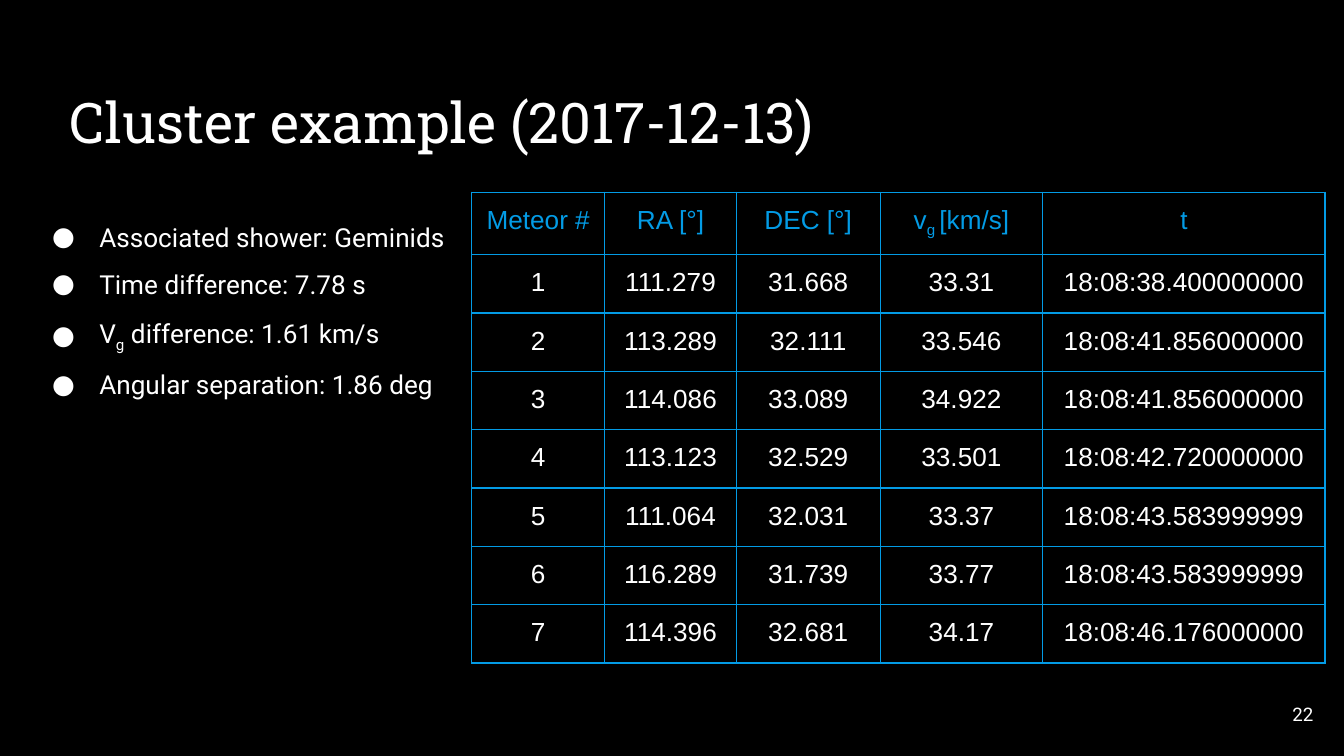
import pptx
import pptx.dml.color
import pptx.enum.text
import pptx.oxml
import pptx.oxml.ns
import pptx.util
from pptx.util import Inches

WHITE = "FFFFFF"
BLUE = "039BE5"
ALIGN = pptx.enum.text.PP_ALIGN
ANCHOR = pptx.enum.text.MSO_ANCHOR

HEADERS = ["Meteor #", "RA [°]", "DEC [°]", ["v", "g ", "[km/s]"], "t"]
METEORS = [
    ["1", "111.279", "31.668", "33.31", "18:08:38.400000000"],
    ["2", "113.289", "32.111", "33.546", "18:08:41.856000000"],
    ["3", "114.086", "33.089", "34.922", "18:08:41.856000000"],
    ["4", "113.123", "32.529", "33.501", "18:08:42.720000000"],
    ["5", "111.064", "32.031", "33.37", "18:08:43.583999999"],
    ["6", "116.289", "31.739", "33.77", "18:08:43.583999999"],
    ["7", "114.396", "32.681", "34.17", "18:08:46.176000000"],
]
COLUMN_WIDTHS = [0.99, 0.98, 1.07, 1.21, 2.1]
ROW_HEIGHTS = [0.42] * 2 + [0.38] + [0.42] * 5
FACTS = [
    "Associated shower: Geminids",
    "Time difference: 7.78 s",
    ["V", "g", " difference: 1.61 km/s"],
    "Angular separation: 1.86 deg",
]


def color(value):
    return pptx.dml.color.RGBColor.from_string(value)


def add_element(parent, xml):
    namespace = pptx.oxml.ns.nsdecls("a")
    parent.append(pptx.oxml.parse_xml(xml.replace(" ", f" {namespace} ", 1)))


def write(paragraph, text, font_name, size, font_color, alignment=ALIGN.LEFT):
    parts = [text] if isinstance(text, str) else text
    for index, part in enumerate(parts):
        run = paragraph.add_run()
        run.text = part
        if index == 1:
            run.font._element.set("baseline", "-25000")
    paragraph.alignment = alignment
    paragraph.font.name = font_name
    paragraph.font.size = pptx.util.Pt(size)
    paragraph.font.color.rgb = color(font_color)


def set_margins(target):
    for side in ("left", "top", "right", "bottom"):
        setattr(target, f"margin_{side}", Inches(0.1))


def add_text_frame(slide, box, anchor):
    frame = slide.shapes.add_textbox(*map(Inches, box)).text_frame
    frame.word_wrap = True
    frame.vertical_anchor = anchor
    set_margins(frame)
    return frame


def add_title(slide, box):
    frame = add_text_frame(slide, box, ANCHOR.BOTTOM)
    write(frame.paragraphs[0], "Cluster example (2017-12-13)", "Roboto Slab", 30, WHITE)


def add_slide_number(slide, box):
    frame = add_text_frame(slide, box, ANCHOR.MIDDLE)
    write(frame.paragraphs[0], "22", "Roboto", 10, WHITE, ALIGN.RIGHT)


def add_facts(slide, box):
    frame = add_text_frame(slide, box, ANCHOR.TOP)
    for index, fact in enumerate(FACTS):
        paragraph = frame.add_paragraph() if index else frame.paragraphs[0]
        paragraph.line_spacing = 1.5
        properties = paragraph._p.get_or_add_pPr()
        properties.set("marL", str(Inches(0.5)))
        properties.set("indent", str(Inches(-0.35)))
        add_element(properties, f'<a:buClr ><a:srgbClr val="{WHITE}"/></a:buClr>')
        add_element(properties, '<a:buSzPts val="1400"/>')
        add_element(properties, '<a:buFont typeface="Roboto"/>')
        add_element(properties, '<a:buChar char="●"/>')
        write(paragraph, fact, "Roboto", 14, WHITE)


def add_borders(cell):
    properties = cell._tc.get_or_add_tcPr()
    for edge in ("lnL", "lnR", "lnT", "lnB"):
        add_element(
            properties,
            f'<a:{edge} w="{pptx.util.Pt(0.75)}"><a:solidFill>'
            f'<a:srgbClr val="{BLUE}"/></a:solidFill></a:{edge}>',
        )


def add_meteor_table(slide, box):
    rows = [HEADERS] + METEORS
    table_frame = slide.shapes.add_table(
        len(rows), len(COLUMN_WIDTHS), *map(Inches, box)
    )
    table = table_frame.table
    table.first_row = False
    table.horz_banding = False
    for column, width in zip(table.columns, COLUMN_WIDTHS):
        column.width = Inches(width)
    for row, height in zip(table.rows, ROW_HEIGHTS):
        row.height = Inches(height)
    table_frame.width, table_frame.height = map(Inches, box[2:])
    for row_index, values in enumerate(rows):
        font_color = WHITE if row_index else BLUE
        for column_index, value in enumerate(values):
            cell = table.cell(row_index, column_index)
            set_margins(cell)
            add_borders(cell)
            cell.fill.background()
            paragraph = cell.text_frame.paragraphs[0]
            write(paragraph, value, "Arial", 14, font_color, ALIGN.CENTER)


def main():
    presentation = pptx.Presentation()
    presentation.slide_width = Inches(10)
    presentation.slide_height = Inches(10 * 9 / 16)
    slide = presentation.slides.add_slide(presentation.slide_layouts[6])
    slide.background.fill.solid()
    slide.background.fill.fore_color.rgb = color("000000")
    add_title(slide, (0.42, 0.5, 9.15, 0.75))
    add_slide_number(slide, (9.27, 5.1, 0.6, 0.43))
    add_meteor_table(slide, (3.51, 1.43, 3.28, 3.28))
    add_facts(slide, (0.14, 1.43, 3.28, 2.13))
    presentation.save("out.pptx")


if __name__ == "__main__":
    main()
